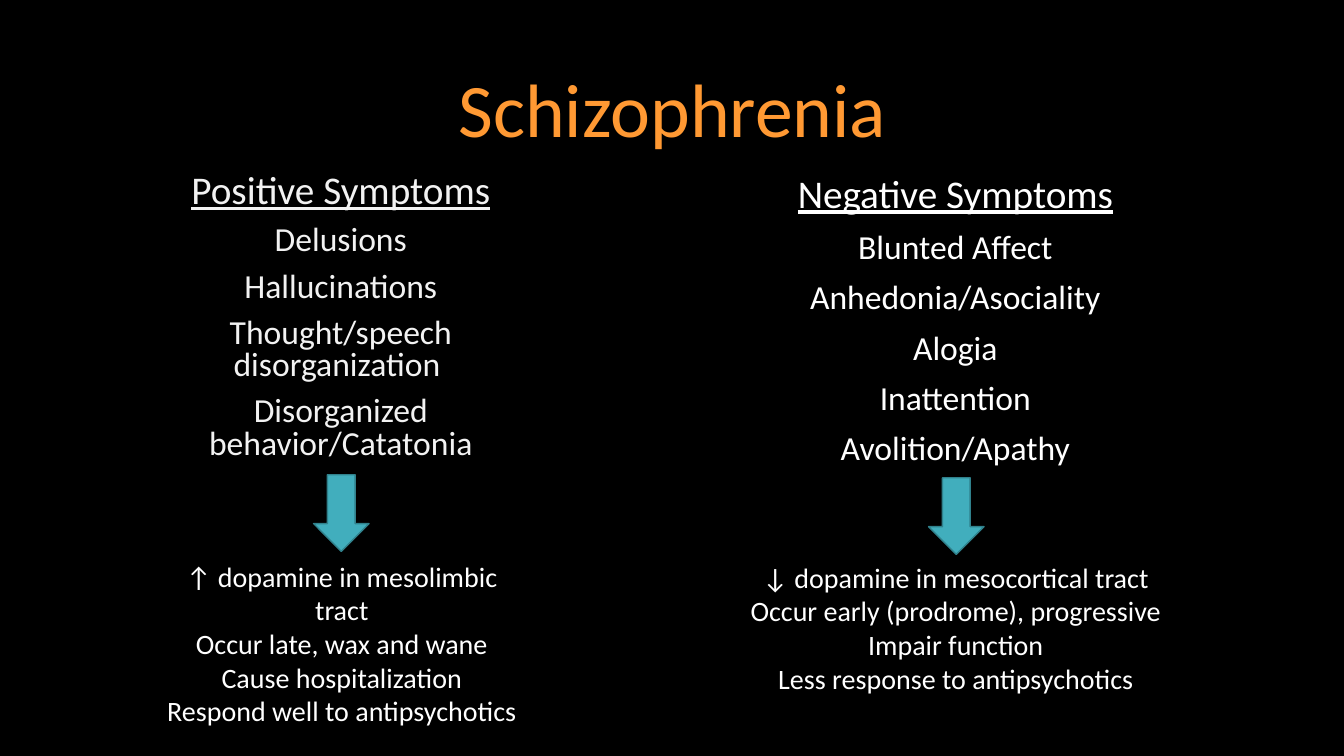
import pptx
import pptx.util
import pptx.dml.color
import pptx.enum.shapes
import pptx.enum.text
import lxml.etree

Inches = pptx.util.Inches
COLOURS = {
    "background": "000000",
    "title": "FF9933",
    "soft": "F2F2F2",
    "text": "FFFFFF",
    "arrow": "41AEBD",
    "edge": "30818C",
}


def colour(name):
    return pptx.dml.color.RGBColor.from_string(COLOURS[name])


def write(para, text, size, ink="text", font="Calibri", underline=False,
          spacing=1.0, before=0):
    """Write one centred paragraph in the given format."""
    properties = para._p.get_or_add_pPr()
    properties.set("marL", "0")
    properties.set("indent", "0")
    para.alignment = pptx.enum.text.PP_ALIGN.CENTER
    para.line_spacing = spacing
    para.space_before = pptx.util.Pt(before)
    para.space_after = pptx.util.Pt(0)
    lxml.etree.SubElement(properties, pptx.oxml.ns.qn("a:buNone"))
    span = para.add_run()
    span.text = text
    span.font.name = font
    span.font.size = pptx.util.Pt(size)
    span.font.underline = underline
    span.font.color.rgb = colour(ink)


class SymptomSlide:
    """Hold the deck, its style and the current page."""

    def __init__(self):
        self.deck = pptx.Presentation()
        self.deck.slide_width = Inches(13.33)
        self.deck.slide_height = Inches(7.5)
        self.page = self.deck.slides.add_slide(self.deck.slide_layouts[1])
        self.page.background.fill.solid()
        self.page.background.fill.fore_color.rgb = colour("background")

    def place(self, box, position, inset=0.1, anchor="TOP"):
        """Position a text shape and return its frame."""
        box.left, box.top, box.width, box.height = map(Inches, position)
        frame = box.text_frame
        frame.word_wrap = True
        frame.auto_size = pptx.enum.text.MSO_AUTO_SIZE.NONE
        frame.margin_left = frame.margin_right = Inches(inset)
        frame.vertical_anchor = pptx.enum.text.MSO_ANCHOR[anchor]
        return frame

    def text_box(self):
        return self.page.shapes.add_textbox(0, 0, 0, 0)

    def title(self, text, position):
        frame = self.place(self.page.shapes.title, position, anchor="MIDDLE")
        write(frame.paragraphs[0], text, 54, ink="title", spacing=0.9)

    def symptoms(self, box, position, heading, items, spacing, ink, inset):
        """Write an underlined heading with its symptoms."""
        frame = self.place(box, position, inset)
        write(frame.paragraphs[0], heading, 28, ink=ink, underline=True,
              spacing=spacing)
        for item in items:
            write(frame.add_paragraph(), item, 24, ink=ink, spacing=spacing,
                  before=10)

    def notes(self, position, lines, inset):
        """Write the clinical features below an arrow."""
        frame = self.place(self.text_box(), position, inset)
        for index, line in enumerate(lines):
            para = frame.add_paragraph() if index else frame.paragraphs[0]
            write(para, line, 20)

    def arrow(self, left, top):
        """Draw a down arrow."""
        shape = self.page.shapes.add_shape(
            pptx.enum.shapes.MSO_SHAPE.DOWN_ARROW,
            Inches(left), Inches(top), Inches(0.55), Inches(0.76))
        shape.shadow.inherit = False
        shape.fill.solid()
        shape.fill.fore_color.rgb = colour("arrow")
        shape.line.color.rgb = colour("edge")
        shape.line.width = pptx.util.Pt(1)


def main():
    slide = SymptomSlide()
    slide.title("Schizophrenia", (0.92, 0.4, 11.5, 1.45))

    slide.symptoms(
        slide.page.placeholders[1], (1.12, 1.68, 4.52, 3.19),
        "Positive Symptoms",
        ["Delusions", "Hallucinations", "Thought/speech disorganization ",
         "Disorganized behavior/Catatonia"],
        spacing=0.8, ink="soft", inset=0.15)
    slide.arrow(3.11, 4.71)
    slide.notes(
        (1.47, 5.5, 3.84, 1.45),
        ["↑ dopamine in mesolimbic tract", "Occur late, wax and wane",
         "Cause hospitalization", "Respond well to antipsychotics"],
        inset=0.15)

    slide.symptoms(
        slide.text_box(), (7.72, 1.68, 3.51, 3.04),
        "Negative Symptoms",
        ["Blunted Affect", "Anhedonia/Asociality", "Alogia", "Inattention",
         "Avolition/Apathy"],
        spacing=0.9, ink="text", inset=0.1)
    slide.arrow(9.21, 4.74)
    slide.notes(
        (7.3, 5.51, 4.36, 1.45),
        ["↓ dopamine in mesocortical tract",
         "Occur early (prodrome), progressive", "Impair function",
         "Less response to antipsychotics"],
        inset=0.1)

    slide.deck.save("out.pptx")


if __name__ == "__main__":
    main()
